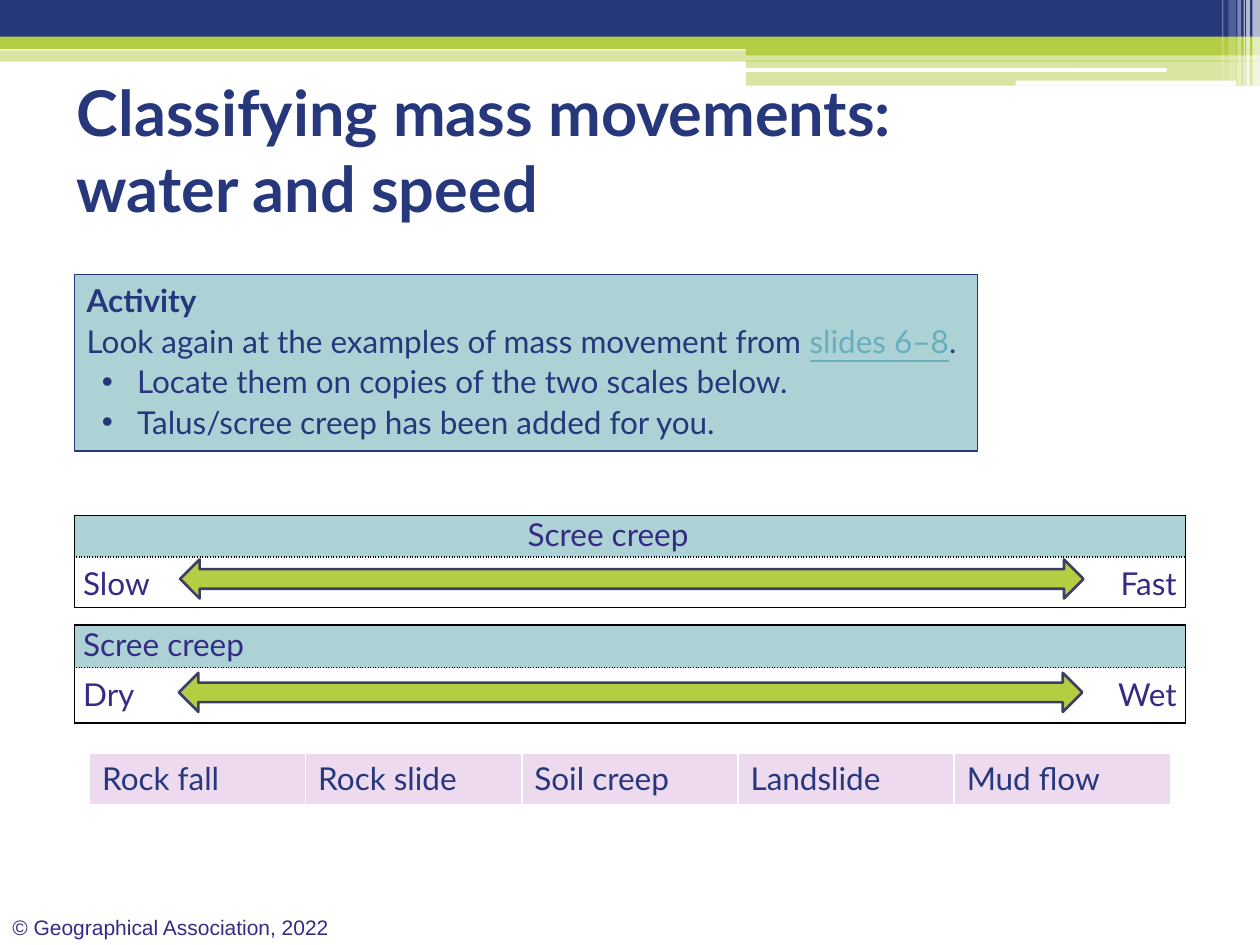
import pptx
import pptx.dml.color
import pptx.enum.shapes
import pptx.enum.text
import pptx.oxml
import pptx.oxml.ns
import pptx.util
from lxml import etree

Inches, Pt = pptx.util.Inches, pptx.util.Pt
RGBColor = pptx.dml.color.RGBColor
SHAPE = pptx.enum.shapes.MSO_SHAPE
ALIGN = pptx.enum.text.PP_ALIGN
qn = pptx.oxml.ns.qn

NAVY = RGBColor(0x26, 0x37, 0x7C)
INK = RGBColor(0x24, 0x3D, 0x91)
VIOLET = RGBColor(0x35, 0x2B, 0x84)
GREEN = RGBColor(0xB4, 0xCE, 0x44)
TEAL = RGBColor(0xAD, 0xD2, 0xD6)
LINK = RGBColor(0x67, 0xAF, 0xBD)
PINK = RGBColor(0xED, 0xDA, 0xEE)
OUTLINE = RGBColor(0x3D, 0x3E, 0x66)
BLACK = RGBColor(0, 0, 0)
WHITE = RGBColor(0xFF, 0xFF, 0xFF)

presentation = pptx.Presentation()
presentation.slide_width, presentation.slide_height = Inches(10), Inches(7.5)
slide = presentation.slides.add_slide(presentation.slide_layouts[5])


def add_block(kind, box, color, alpha=100, line=None, line_width=1):
    shape = slide.shapes.add_shape(kind, *map(Inches, box))
    shape.shadow.inherit = False
    shape.fill.solid()
    shape.fill.fore_color.rgb = color
    if alpha < 100:
        fill_color = shape.fill._xPr.find(qn("a:solidFill"))[0]
        etree.SubElement(fill_color, qn("a:alpha")).set("val", str(alpha * 1000))
    if line is None:
        shape.line.fill.background()
    else:
        shape.line.color.rgb = line
        shape.line.width = Pt(line_width)
    return shape


def add_text(paragraph, text, color, size=18, **formats):
    run = paragraph.add_run()
    run.text = text
    run.font.color.rgb = color
    for name, value in {"name": "Lato", "size": Pt(size), **formats}.items():
        setattr(run.font, name, value)


# Header bands
for box, color, alpha in [
    ((0, 0.4, 10, 0.09), GREEN, 50),
    ((0, 0, 10, 0.34), NAVY, 100),
    ((0, 0.29, 10, 0.1), GREEN, 100),
    ((5.92, 0.34, 4.08, 0.1), GREEN, 100),
    ((5.92, 0.48, 4.08, 0.2), GREEN, 50),
]:
    add_block(SHAPE.RECTANGLE, box, color, alpha)
for box in [(5.91, 0.54, 3.35, 0.03), (8.06, 0.64, 1.75, 0.04)]:
    add_block(SHAPE.ROUNDED_RECTANGLE, box, WHITE)

# Pale vertical stripes in the corner
for left, width, height, alpha in [
    (9.94, 0.06, 0.68, 65),
    (9.89, 0.03, 0.68, 65),
    (9.87, 0.01, 0.68, 60),
    (9.82, 0.03, 0.68, 40),
    (9.75, 0.06, 0.64, 20),
    (9.7, 0.01, 0.64, 30),
]:
    add_block(SHAPE.RECTANGLE, (left, 0, width, height), WHITE, alpha)

# Title
title = slide.shapes.title
title.left, title.top, title.width, title.height = map(Inches, (0.51, 0.6, 9, 1.17))
title.text_frame.word_wrap = True
title.text_frame.auto_size = pptx.enum.text.MSO_AUTO_SIZE.NONE
title.text_frame.vertical_anchor = pptx.enum.text.MSO_ANCHOR.MIDDLE
paragraph = title.text_frame.paragraphs[0]
paragraph.alignment = ALIGN.LEFT
add_text(paragraph, "Classifying mass movements:", NAVY, 36, bold=True)
paragraph.add_line_break()
add_text(paragraph, "water and speed", NAVY, 36, bold=True)

# Copyright line
footer = slide.shapes.add_textbox(*map(Inches, (0, 7.21, 2.87, 0.3)))
footer.text_frame.word_wrap = True
add_text(footer.text_frame.paragraphs[0], "© Geographical Association, 2022",
         VIOLET, 12, name="Arial")

# Activity box
activity = add_block(SHAPE.RECTANGLE, (0.59, 2.18, 7.17, 1.4), TEAL,
                     line=NAVY, line_width=0.75)
frame = activity.text_frame
frame.word_wrap = True
frame.vertical_anchor = pptx.enum.text.MSO_ANCHOR.TOP
heading = frame.paragraphs[0]
heading.alignment = ALIGN.LEFT
add_text(heading, "Activity", NAVY, bold=True)
task = frame.add_paragraph()
task.alignment, task.line_spacing = ALIGN.LEFT, 1.08
add_text(task, "Look again at the examples of mass movement from ", NAVY)
add_text(task, "slides 6–8", LINK, underline=True)
add_text(task, ".", INK)
for text in ["Locate them on copies of the two scales below.",
             "Talus/scree creep has been added for you."]:
    paragraph = frame.add_paragraph()
    paragraph.alignment, paragraph.line_spacing = ALIGN.LEFT, 1.08
    properties = paragraph._p.get_or_add_pPr()
    properties.set("marL", str(Inches(0.4)))
    properties.set("indent", str(Inches(-0.28)))
    bullet_color = etree.SubElement(properties, qn("a:buClr"))
    etree.SubElement(bullet_color, qn("a:srgbClr")).set("val", str(NAVY))
    etree.SubElement(properties, qn("a:buFont")).set("typeface", "Arial")
    etree.SubElement(properties, qn("a:buChar")).set("char", "•")
    add_text(paragraph, text, NAVY)

# Speed and water scales: a label row above a row with the two ends
for top, heights, example_column, low, high, arrow_left, arrow_top in [
    (4.09, (0.33, 0.4), 2, "Slow", "Fast", 1.43, 4.44),
    (4.96, (0.34, 0.44), 0, "Dry", "Wet", 1.42, 5.34),
]:
    add_block(SHAPE.LEFT_RIGHT_ARROW, (arrow_left, arrow_top, 7.17, 0.31), GREEN,
              line=OUTLINE, line_width=1.5)
    table = slide.shapes.add_table(2, 5, *map(Inches, (0.59, top, 8.82, sum(heights)))).table
    table.first_row = table.horz_banding = False
    labels = {(0, example_column): "Scree creep", (1, 0): low, (1, 4): high}
    for row in range(2):
        table.rows[row].height = Inches(heights[row])
        for column in range(5):
            cell = table.cell(row, column)
            cell.margin_left = cell.margin_right = Inches(0.07)
            cell.margin_top = cell.margin_bottom = 0

            # Outer frame solid, middle line dotted, no inner verticals
            borders = {"L": "solid" if column == 0 else None,
                       "R": "solid" if column == 4 else None,
                       "T": "sysDot" if row else "solid",
                       "B": "solid" if row else "sysDot"}
            for side, dash in borders.items():
                border = etree.SubElement(cell._tc.get_or_add_tcPr(), qn("a:ln" + side))
                border.set("w", str(Pt(1)))
                if dash is None:
                    etree.SubElement(border, qn("a:noFill"))
                    continue
                solid = etree.SubElement(border, qn("a:solidFill"))
                etree.SubElement(solid, qn("a:srgbClr")).set("val", str(BLACK))
                etree.SubElement(border, qn("a:prstDash")).set("val", dash)

            if row == 0:
                cell.fill.solid()
                cell.fill.fore_color.rgb = TEAL
            else:
                cell.fill.background()
            if (row, column) in labels:
                paragraph = cell.text_frame.paragraphs[0]
                if row:
                    paragraph.line_spacing, paragraph.space_after = 1.2, Pt(6)
                    paragraph.alignment = ALIGN.RIGHT if column else ALIGN.LEFT
                add_text(paragraph, labels[row, column], VIOLET)

# Mass movement types
movements = ["Rock fall", "Rock slide", "Soil creep", "Landslide", "Mud flow"]
table = slide.shapes.add_table(1, len(movements), *map(Inches, (0.71, 5.98, 8.58, 0.41))).table
table.first_row = table.horz_banding = False
for cell, movement in zip(table.rows[0].cells, movements):
    cell.fill.solid()
    cell.fill.fore_color.rgb = PINK
    add_text(cell.text_frame.paragraphs[0], movement, NAVY)

presentation.save("out.pptx")
